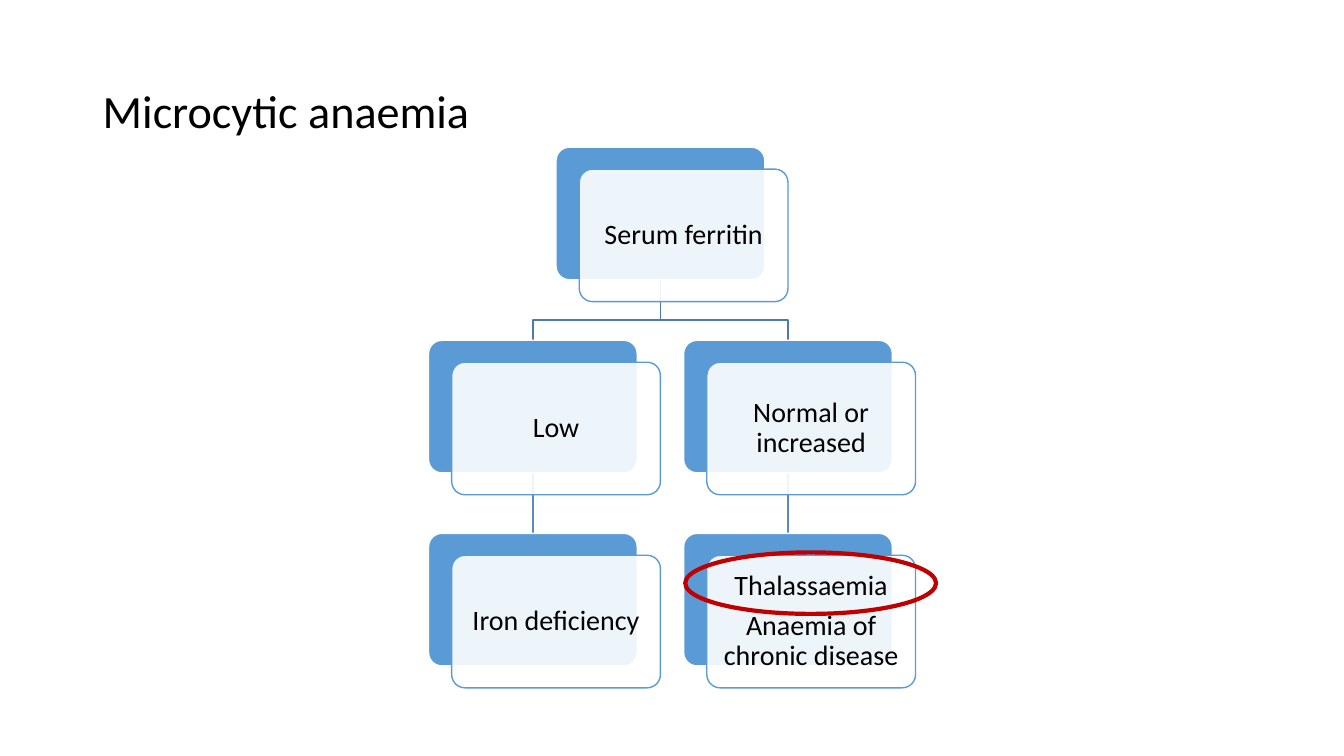
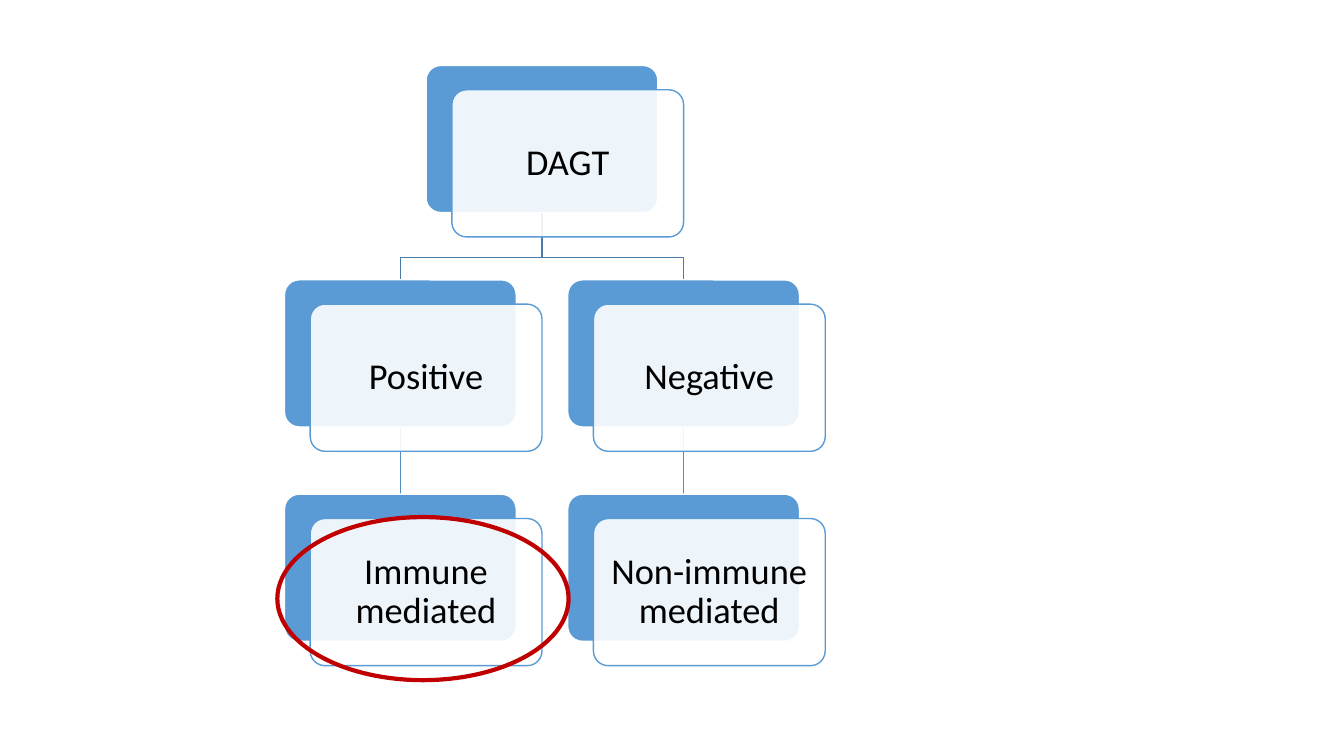
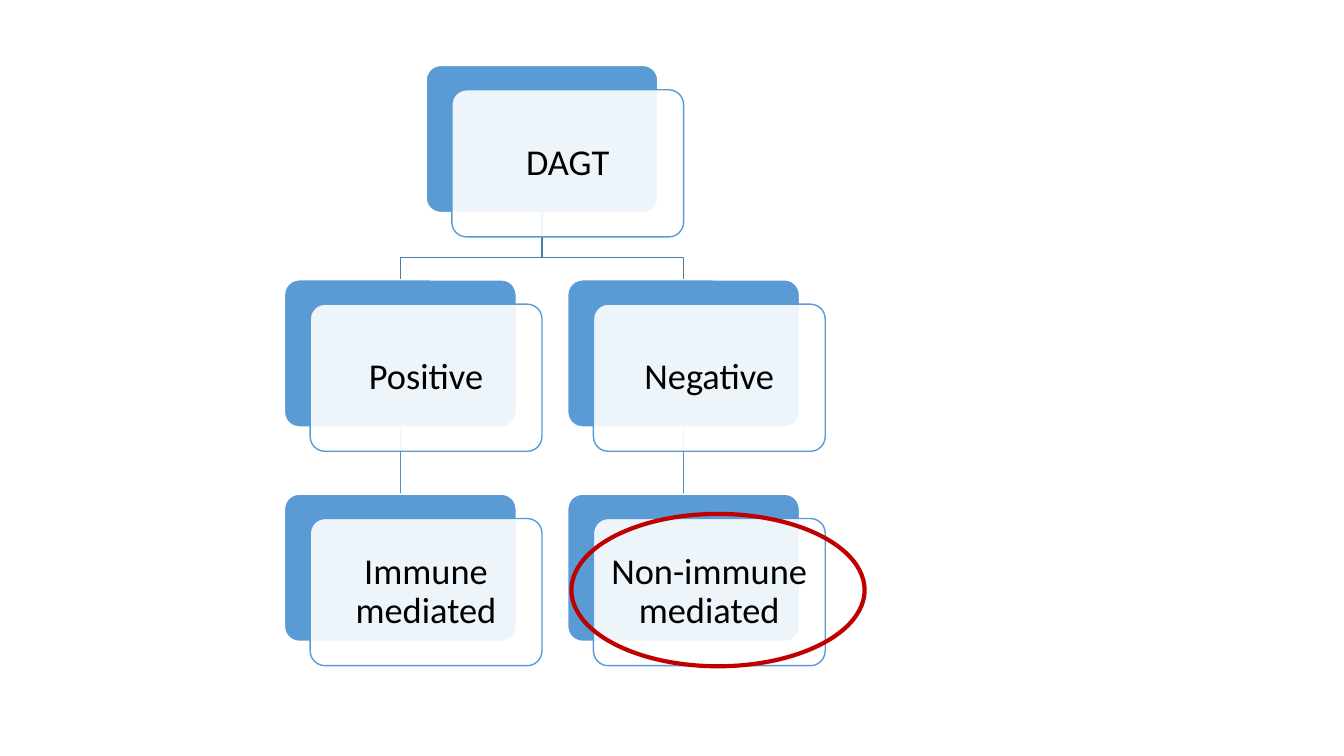
"""Build three slides of decision trees for diagnosing anaemia."""
from lxml import etree
from pptx import Presentation
from pptx.dml.color import RGBColor
from pptx.enum.shapes import MSO_CONNECTOR, MSO_SHAPE
from pptx.enum.text import MSO_ANCHOR, PP_ALIGN
from pptx.oxml.ns import qn
from pptx.util import Cm, Pt

STRAIGHT = MSO_CONNECTOR.STRAIGHT
ROUNDED, OVAL = MSO_SHAPE.ROUNDED_RECTANGLE, MSO_SHAPE.OVAL
MIDDLE = MSO_ANCHOR.MIDDLE
LEFT, CENTER = PP_ALIGN.LEFT, PP_ALIGN.CENTER

BLUE = RGBColor(0x5B, 0x9B, 0xD5)
BRANCH_BLUE = RGBColor(0x49, 0x7C, 0xAB)
STEM_BLUE = RGBColor(0x53, 0x8D, 0xC1)
RED = RGBColor(0xC0, 0x00, 0x00)
WHITE = RGBColor(0xFF, 0xFF, 0xFF)
BLACK = RGBColor(0x00, 0x00, 0x00)

FONT = "Calibri"
CELLS = [(0.5, 0), (0, 1), (1, 1), (0, 2), (1, 2)]
DAGT_TREE = {
    "left": 7.17, "top": 1.65, "width": 5.84, "size": 26,
    "labels": [["DAGT"], ["Positive"], ["Negative"],
               ["Immune mediated"], ["Non-immune mediated"]],
}
SLIDES = [
    {
        "title": "Microcytic anaemia",
        "left": 10.8, "top": 3.71, "width": 5.26, "size": 20,
        "labels": [["Serum ferritin"], ["Low"], ["Normal or increased"], ["Iron deficiency"],
                   ["Thalassaemia", "Anaemia of chronic disease"]],
        "ring": (17.27, 13.92, 6.32, 1.55),
    },
    {**DAGT_TREE, "ring": (6.99, 13.03, 7.34, 4.11)},
    {**DAGT_TREE, "ring": (14.4, 12.95, 7.39, 3.84)},
]


def write(shape, lines, size, alignment, space_after):
    """Fill a shape with paragraphs in the shared text style."""
    frame = shape.text_frame
    frame.word_wrap = True
    frame.vertical_anchor = MIDDLE
    frame.text = "\n".join(lines)
    paragraph_format = {"alignment": alignment, "line_spacing": 0.9, "space_after": Pt(space_after)}
    font_format = {"name": FONT, "size": Pt(size)}
    for paragraph in frame.paragraphs:
        for name, value in paragraph_format.items():
            setattr(paragraph, name, value)
        for name, value in font_format.items():
            setattr(paragraph.font, name, value)
        paragraph.font.color.rgb = BLACK


def style(shape, fill, line, weight):
    """Set fill and line, and remove the shadow."""
    shape.shadow.inherit = False
    if fill is None:
        shape.fill.background()
    else:
        shape.fill.solid()
        shape.fill.fore_color.rgb = fill
    shape.line.color.rgb = line
    shape.line.width = Pt(weight)


presentation = Presentation()
presentation.slide_width = Cm(33.87)
presentation.slide_height = Cm(19.05)

for tree in SLIDES:
    slide = presentation.slides.add_slide(presentation.slide_layouts[6])
    if "title" in tree:
        title = slide.shapes.add_textbox(Cm(2.34), Cm(1.02), Cm(29.21), Cm(3.68))
        write(title, [tree["title"]], 33, LEFT, 0)

    width, size = tree["width"], tree["size"]
    height = width * 0.635
    column_step, row_step = width * 11 / 9, width * 0.925
    shift_x, shift_y = width / 9, width * 0.105
    row_gap = row_step - height
    places = [(tree["left"] + column * column_step, tree["top"] + row * row_step)
              for column, row in CELLS]

    root_x, root_bottom = places[0][0] + width / 2, places[0][1] + height
    bus_y = root_bottom + row_gap * 2 / 3
    for left, top in places[1:3]:
        x, bottom = left + width / 2, top + height
        builder = slide.shapes.build_freeform(Cm(root_x), Cm(root_bottom))
        builder.add_line_segments(
            [(Cm(root_x), Cm(bus_y)), (Cm(x), Cm(bus_y)), (Cm(x), Cm(top))], close=False)
        style(builder.convert_to_shape(), None, BRANCH_BLUE, 1)

        stem = slide.shapes.add_connector(STRAIGHT, Cm(x), Cm(bottom), Cm(x), Cm(bottom + row_gap))
        stem.line.color.rgb = STEM_BLUE
        stem.line.width = Pt(1)
        etree.SubElement(stem._element.spPr, qn("a:effectLst"))

    for (left, top), lines in zip(places, tree["labels"]):
        back = slide.shapes.add_shape(ROUNDED, Cm(left), Cm(top), Cm(width), Cm(height))
        card = slide.shapes.add_shape(
            ROUNDED, Cm(left + shift_x), Cm(top + shift_y), Cm(width), Cm(height))
        for shape, fill, line in [(back, BLUE, WHITE), (card, WHITE, BLUE)]:
            shape.adjustments[0] = 0.1
            style(shape, fill, line, 1)
        card_color = card._element.spPr.find(qn("a:solidFill")).find(qn("a:srgbClr"))
        etree.SubElement(card_color, qn("a:alpha"), val="90000")
        for side in ("left", "top", "right", "bottom"):
            setattr(card.text_frame, f"margin_{side}", Cm(size * 0.01))
        write(card, lines, size, CENTER, size * 0.35)

    ring = slide.shapes.add_shape(OVAL, *map(Cm, tree["ring"]))
    style(ring, None, RED, 3)

presentation.save("out.pptx")
